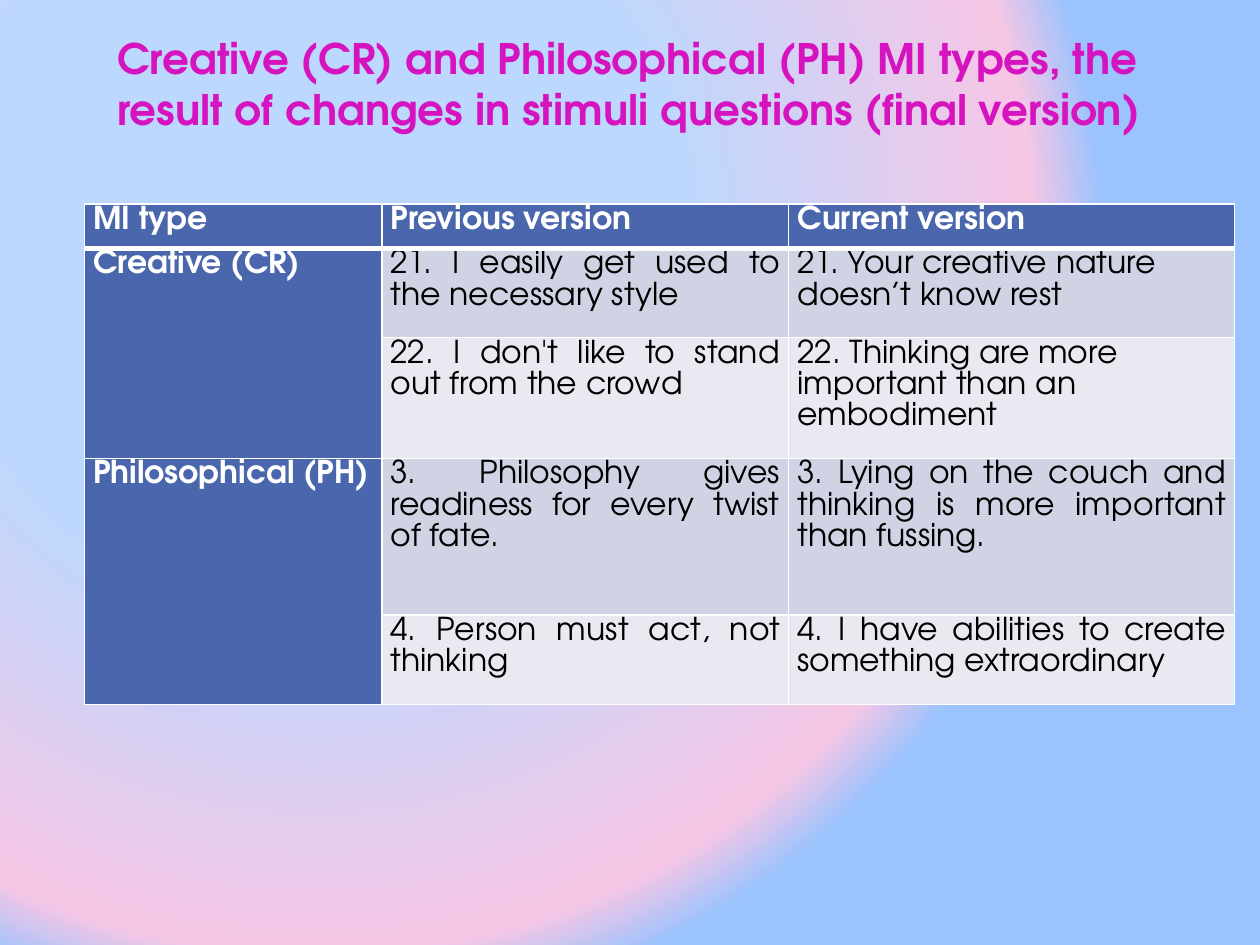
from dataclasses import dataclass

from pptx import Presentation, util as u
from pptx.dml.color import RGBColor
from pptx.enum import text
from pptx.oxml import parse_xml
from pptx.oxml.ns import nsdecls, qn

LEFT, JUST = text.PP_ALIGN.LEFT, text.PP_ALIGN.JUSTIFY


@dataclass(frozen=True)
class Theme:
    font: str = "TeX Gyre Adventor"
    title: str = "D614BF"
    head: str = "4A66AC"
    bands: tuple = ("D0D3E3", "E9EAF1")
    white: str = "FFFFFF"
    black: str = "000000"
    stops: tuple = ((46, "BDD8FE"), (91, "F6C6E5"), (100, "9BC3FE"))
    big: int = 24
    body: int = 18
    thin: int = 1
    thick: int = 3


class Page:
    def __init__(self, deck, theme):
        self.theme = theme
        self.slide = deck.slides.add_slide(deck.slide_layouts[5])

    def back(self):
        """Fill the background with a circular gradient."""
        self.slide.background.fill.gradient()
        old = self.slide.element.find(".//" + qn("a:gradFill"))
        stops = "".join(
            f'<a:gs pos="{pos * 1000}"><a:srgbClr val="{color}"/></a:gs>'
            for pos, color in self.theme.stops)
        old.getparent().replace(old, parse_xml(
            f'<a:gradFill {nsdecls("a")} rotWithShape="1">'
            f'<a:gsLst>{stops}</a:gsLst><a:path path="circle">'
            '<a:fillToRect l="50000" t="50000" r="100000" b="100000"/>'
            '</a:path></a:gradFill>'))

    def run(self, para, words, size, color, bold):
        run = para.add_run()
        run.text = words
        font = run.font
        font.name, font.size, font.bold = self.theme.font, u.Pt(size), bold
        font.color.rgb = RGBColor.from_string(color)

    def title(self, words, left, top, width, height):
        shape = self.slide.shapes.title
        shape.left, shape.top = u.Inches(left), u.Inches(top)
        shape.width, shape.height = u.Inches(width), u.Inches(height)
        frame = shape.text_frame
        frame.word_wrap = True
        frame.auto_size = text.MSO_AUTO_SIZE.NONE
        frame.vertical_anchor = text.MSO_ANCHOR.TOP
        para = frame.paragraphs[0]
        para.alignment = LEFT
        self.run(para, words, self.theme.big, self.theme.title, True)

    def edge(self, cell, row):
        """Draw white borders, thick between the header and the body."""
        thick = {0: "B", 1: "T"}.get(row)
        props = cell._tc.get_or_add_tcPr()
        for spot, side in enumerate("LRTB"):
            width = self.theme.thick if side == thick else self.theme.thin
            props.insert(spot, parse_xml(
                f'<a:ln{side} {nsdecls("a")} w="{u.Pt(width)}"><a:solidFill>'
                f'<a:srgbClr val="{self.theme.white}"/></a:solidFill>'
                f'</a:ln{side}>'))

    def cell(self, cell, row, col, words, align):
        theme = self.theme
        head = row == 0 or col == 0
        cell.margin_left = cell.margin_right = u.Inches(0.07)
        cell.margin_top = cell.margin_bottom = 0
        cell.fill.solid()
        cell.fill.fore_color.rgb = RGBColor.from_string(
            theme.head if head else theme.bands[(row - 1) % 2])
        self.edge(cell, row)
        if words:
            para = cell.text_frame.paragraphs[0]
            para.alignment, para.line_spacing = align, 1.07
            self.run(para, words, theme.body,
                     theme.white if head else theme.black, head)

    def table(self, rows, left, top, widths, heights, spans):
        """Add a table; spans lists the first-column rows that cover two."""
        grid = self.slide.shapes.add_table(
            len(heights), len(widths), u.Inches(left), u.Inches(top),
            u.Inches(sum(widths)), u.Inches(sum(heights))).table
        for col, width in zip(grid.columns, widths):
            col.width = u.Inches(width)
        for row, height in zip(grid.rows, heights):
            row.height = u.Inches(height)
        for r, row in enumerate(rows):
            for c, (words, align) in enumerate(row):
                self.cell(grid.cell(r, c), r, c, words, align)
        for r in spans:
            grid.cell(r, 0).merge(grid.cell(r + 1, 0))


ROWS = [
    [("MI type", JUST), ("Previous version", LEFT), ("Current version", LEFT)],
    [("Creative (CR)", JUST),
     ("21. I easily get used to the necessary style", JUST),
     ("21. Your creative nature doesn’t know rest", LEFT)],
    [("", JUST),
     ("22. I don't like to stand out from the crowd", JUST),
     ("22. Thinking are more important than an embodiment", LEFT)],
    [("Philosophical (PH)", JUST),
     ("3. Philosophy gives readiness for every twist of fate.", JUST),
     ("3. Lying on the couch and thinking is more important than fussing.",
      JUST)],
    [("", JUST),
     ("4. Person must act, not thinking", JUST),
     ("4. I have abilities to create something extraordinary", JUST)],
]


def main():
    deck = Presentation()
    deck.slide_width, deck.slide_height = u.Inches(10), u.Inches(7.5)
    page = Page(deck, Theme())
    page.back()
    page.title("Creative (CR) and Philosophical (PH) MI types, the result of "
               "changes in stimuli questions (final version)",
               0.83, 0.21, 8.65, 0.77)
    page.table(ROWS, 0.67, 1.62, (2.36, 3.23, 3.54),
               (0.35, 0.71, 0.96, 1.24, 0.71), spans=(1, 3))
    deck.save("out.pptx")


if __name__ == "__main__":
    main()
